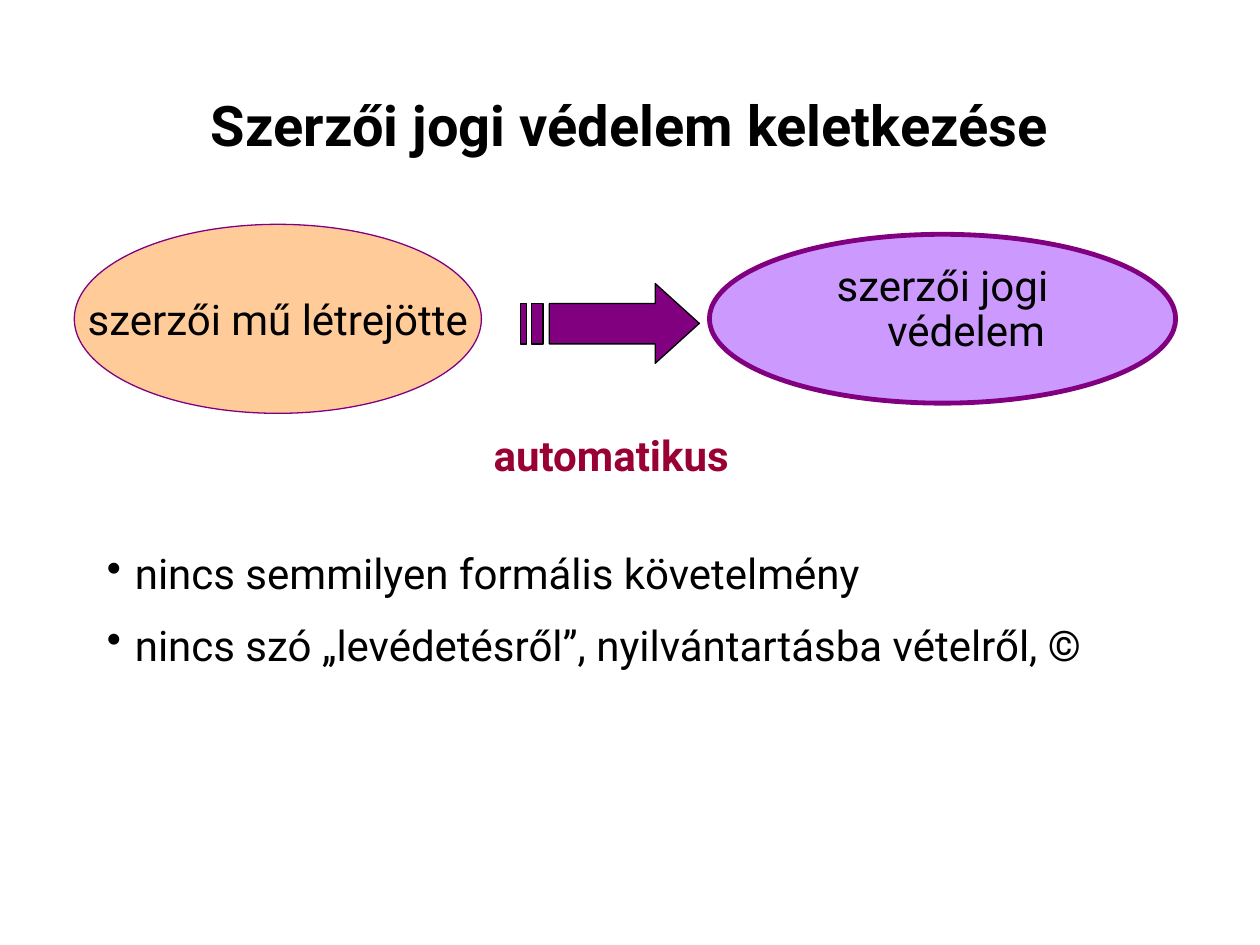
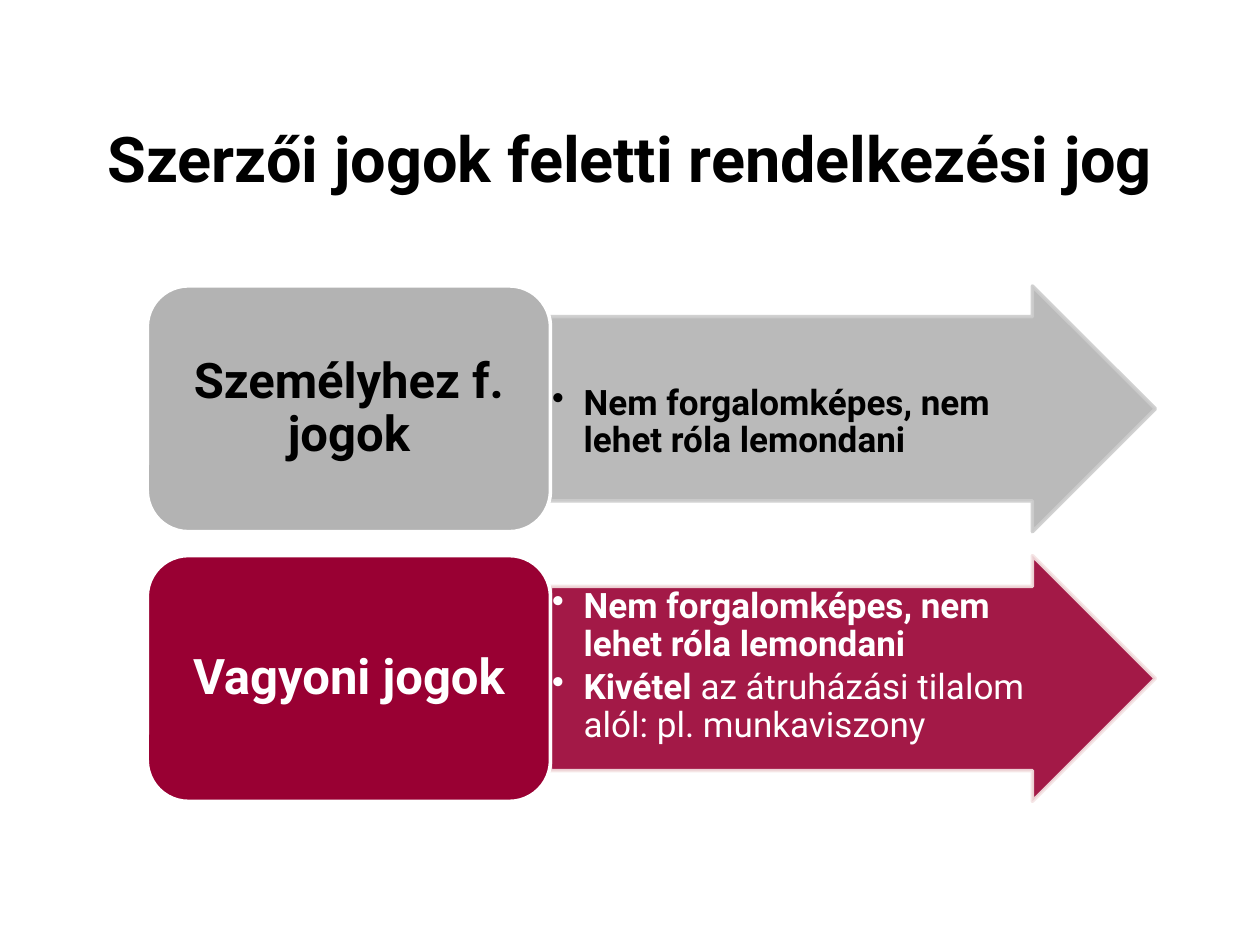
"""Builds two slides on how copyright protection arises and who may dispose of it."""
from pptx import Presentation
from pptx.dml.color import RGBColor
from pptx.enum.shapes import MSO_SHAPE
from pptx.enum.text import MSO_ANCHOR, PP_ALIGN
from pptx.oxml.ns import qn
from pptx.util import Pt

OVAL, ARROW, CARD = MSO_SHAPE.OVAL, MSO_SHAPE.RIGHT_ARROW, MSO_SHAPE.ROUNDED_RECTANGLE
LEFT, CENTER = PP_ALIGN.LEFT, PP_ALIGN.CENTER
TOP, MIDDLE = MSO_ANCHOR.TOP, MSO_ANCHOR.MIDDLE

FONT = "Roboto"
BLACK = RGBColor(0x00, 0x00, 0x00)
WHITE = RGBColor(0xFF, 0xFF, 0xFF)
PURPLE = RGBColor(0x80, 0x00, 0x80)
LILAC = RGBColor(0xCC, 0x99, 0xFF)
PEACH = RGBColor(0xFF, 0xCC, 0x99)
CRIMSON = RGBColor(0x99, 0x00, 0x33)
GRAY = RGBColor(0xB3, 0xB3, 0xB3)
LIGHT_GRAY = RGBColor(0xCC, 0xCC, 0xCC)
PALE_ROSE = RGBColor(0xF4, 0xE3, 0xE3)

ORIGIN_TITLE = ("Szerzői jogi védelem keletkezése", (54, 26, 612, 90), 32)
WORK = "szerzői mű létrejötte"
PROTECTION = "szerzői jogi védelem"
AUTOMATIC = "automatikus"
NO_FORMALITIES = [
    "nincs semmilyen formális követelmény",
    "nincs szó „levédetésről”, nyilvántartásba vételről, ©",
]

RIGHTS_TITLE = ("Szerzői jogok feletti rendelkezési jog", (0, 44.6, 720, 90), 36)
NOT_TRADABLE = [("Nem forgalomképes, nem lehet róla lemondani", True)]
EXCEPTION = [("Kivétel", True), (" az átruházási tilalom alól: pl. munkaviszony", False)]
RIGHTS = [
    ("Személyhez f. jogok", [NOT_TRADABLE], GRAY, LIGHT_GRAY, BLACK, 39),
    ("Vagyoni jogok", [NOT_TRADABLE, EXCEPTION], CRIMSON, PALE_ROSE, WHITE, 1),
]

STRIPES = [(297.4, 301), (303.8, 310.3)]
SHAFT_LEFT, HEAD_LEFT, HEAD_TIP = 313.9, 374.4, 399.6
SHAFT_TOP, SHAFT_BOTTOM = 173.5, 196.5
HEAD_TOP, HEAD_BOTTOM = 162, 207.6

CARD_LEFT, CARD_WIDTH, ARROW_WIDTH = 84.2, 230.4, 345.6
ROW_TOP, ROW_HEIGHT, ROW_STEP = 163.4, 140.4, 154.1


def write(shape, paragraphs, size, color=BLACK, bold=False, align=LEFT, anchor=TOP,
          insets=(7.2, 3.6, 7.2, 3.6), wrap=True, hanging=0, bullet=False,
          line_spacing=None, gap=0):
    """Fill a shape with paragraphs, each a string or a list of (text, bold) runs."""
    frame = shape.text_frame
    frame.word_wrap = wrap
    frame.vertical_anchor = anchor
    (frame.margin_left, frame.margin_top,
     frame.margin_right, frame.margin_bottom) = map(Pt, insets)
    for index, content in enumerate(paragraphs):
        paragraph = frame.add_paragraph() if index else frame.paragraphs[0]
        runs = [(content, bold)] if isinstance(content, str) else content
        for text, run_bold in runs:
            run = paragraph.add_run()
            run.text = text
            if len(runs) > 1:
                run.font.bold = run_bold
        properties = paragraph._p.get_or_add_pPr()
        if hanging:
            properties.set("marL", str(Pt(hanging)))
            properties.set("indent", str(-Pt(hanging)))
        if bullet:
            mark = properties.makeelement(qn("a:buChar"), {"char": "•"})
            properties.append(mark)
        paragraph.alignment = align
        if line_spacing:
            paragraph.line_spacing = line_spacing
        if index:
            paragraph.space_before = Pt(gap)
        font = paragraph.font
        font.name, font.size = FONT, Pt(size)
        font.color.rgb = color
        if len(runs) == 1:
            font.bold = runs[0][1]


def add_text(slide, box, paragraphs, size, **style):
    """Add a text box."""
    write(slide.shapes.add_textbox(*map(Pt, box)), paragraphs, size, **style)


def add_title(slide, text, box, size):
    """Add the bold centred title."""
    add_text(slide, box, [text], size, bold=True, align=CENTER, anchor=MIDDLE)


def paint(shape, fill, line, width):
    """Set fill and outline, without shadow."""
    shape.shadow.inherit = False
    shape.fill.solid()
    shape.fill.fore_color.rgb = fill
    shape.line.color.rgb = line
    shape.line.width = Pt(width)


def add_painted(slide, kind, box, fill, line, width):
    """Add a painted preset shape."""
    shape = slide.shapes.add_shape(kind, *map(Pt, box))
    paint(shape, fill, line, width)
    return shape


def set_opacity(shape, percent):
    """Make fill and outline partly transparent."""
    for color in shape._element.spPr.iter(qn("a:srgbClr")):
        color.append(color.makeelement(qn("a:alpha"), {"val": str(percent * 1000)}))


def add_striped_arrow(slide):
    """Draw the arrow with its trailing stripes as one outline."""
    middle = (HEAD_TOP + HEAD_BOTTOM) / 2
    contours = [[(HEAD_LEFT, HEAD_TOP), (HEAD_LEFT, SHAFT_TOP), (SHAFT_LEFT, SHAFT_TOP),
                 (SHAFT_LEFT, SHAFT_BOTTOM), (HEAD_LEFT, SHAFT_BOTTOM),
                 (HEAD_LEFT, HEAD_BOTTOM), (HEAD_TIP, middle)]]
    contours += [[(left, SHAFT_TOP), (left, SHAFT_BOTTOM),
                  (right, SHAFT_BOTTOM), (right, SHAFT_TOP)] for left, right in STRIPES]
    contours = [[(Pt(x), Pt(y)) for x, y in contour] for contour in contours]
    builder = slide.shapes.build_freeform(*contours[0][0])
    for index, contour in enumerate(contours):
        if index:
            builder.move_to(*contour[0])
        builder.add_line_segments(contour[1:], close=True)
    paint(builder.convert_to_shape(), PURPLE, BLACK, 0.75)


def build_origin(slide):
    """Show how protection follows from creating a work."""
    add_title(slide, *ORIGIN_TITLE)
    work = add_painted(slide, OVAL, (42.5, 128.2, 232.6, 108), PEACH, PURPLE, 0.75)
    write(work, [WORK], 24, align=CENTER, anchor=MIDDLE, wrap=False)
    protection = add_painted(slide, OVAL, (405.4, 133.9, 266.4, 96.5), LILAC, PURPLE, 2.75)
    write(protection, [PROTECTION], 24, align=CENTER, hanging=27, line_spacing=0.9)
    add_striped_arrow(slide)
    add_text(slide, (275, 242, 181.4, 36), [AUTOMATIC], 24, color=CRIMSON, bold=True)
    add_text(slide, (54, 309.6, 623.5, 124), NO_FORMALITIES, 24,
             hanging=16, bullet=True, gap=12)


def build_rights(slide):
    """Show each kind of right beside an arrow with its rules."""
    add_title(slide, *RIGHTS_TITLE)
    for row, (name, rules, fill, outline, color, top_inset) in enumerate(RIGHTS):
        top = ROW_TOP + row * ROW_STEP
        arrow = add_painted(slide, ARROW,
                            (CARD_LEFT + CARD_WIDTH, top, ARROW_WIDTH, ROW_HEIGHT),
                            fill, outline, 2)
        arrow.adjustments[0], arrow.adjustments[1] = 0.75, 0.5
        set_opacity(arrow, 90)
        write(arrow, rules, 20, color=color, insets=(1, top_inset, 1, 1),
              hanging=18, bullet=True, line_spacing=0.9, gap=3)
        card = add_painted(slide, CARD, (CARD_LEFT, top, CARD_WIDTH, ROW_HEIGHT),
                           fill, WHITE, 2)
        write(card, [name], 28, color=color, bold=True, align=CENTER, anchor=MIDDLE,
              insets=(8.6, 4.3, 8.6, 4.3), line_spacing=0.9)


def main():
    """Build and save the presentation."""
    presentation = Presentation()
    presentation.slide_width, presentation.slide_height = Pt(720), Pt(540)
    blank = presentation.slide_layouts[6]
    for build in (build_origin, build_rights):
        build(presentation.slides.add_slide(blank))
    presentation.save("out.pptx")


if __name__ == "__main__":
    main()
